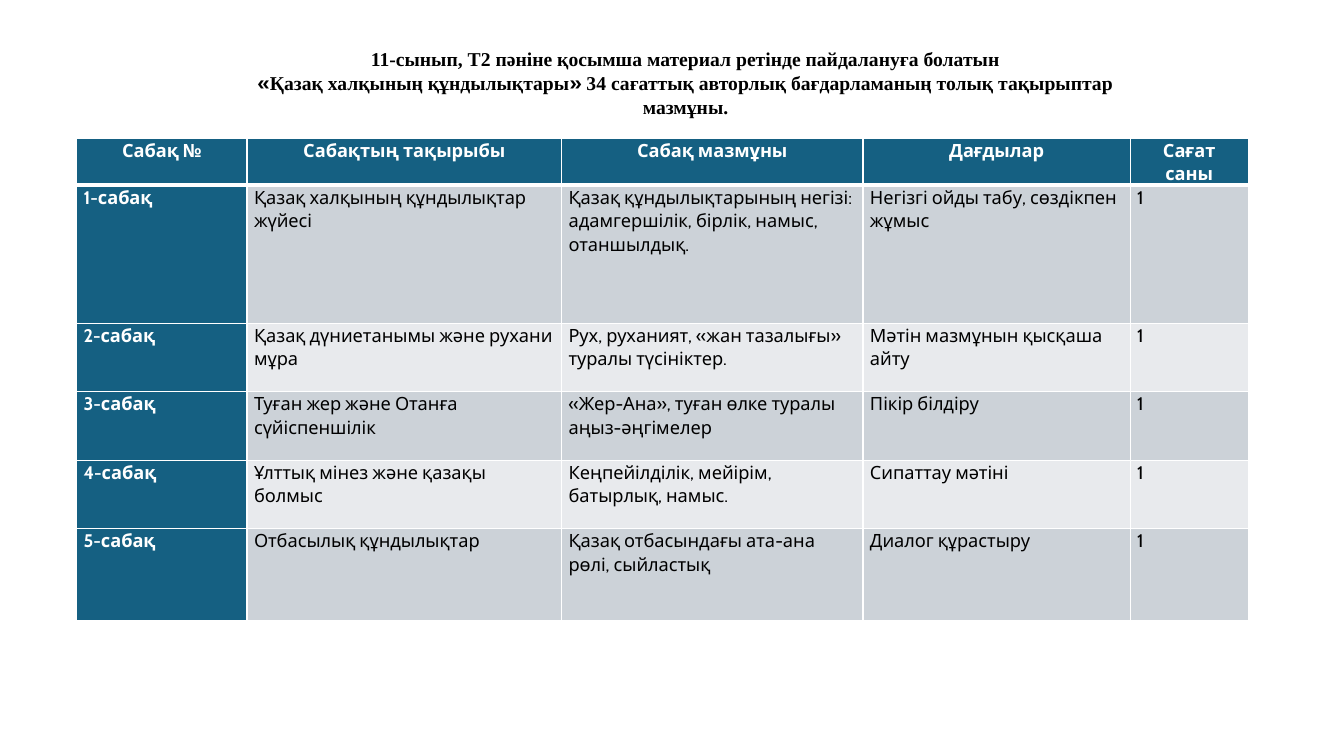
from pptx import Presentation
from pptx import util as u
from pptx.dml.color import RGBColor
from pptx.enum import text
from pptx.oxml import parse_xml
from pptx.oxml.ns import nsdecls

COLOURS = {
    "accent": "156082",
    "odd": "CCD2D8",
    "even": "E8EAED",
    "light": "FFFFFF",
    "dark": "000000",
}

TITLE = [
    [("11-сынып, Т2 пәніне қосымша материал ретінде пайдалануға болатын", "Times New Roman")],
    [
        ("«", "Cabin"),
        ("Қазақ халқының құндылықтары", "Times New Roman"),
        ("»", "Cabin"),
        (" 34 сағаттық авторлық бағдарламаның толық тақырыптар мазмұны.", "Times New Roman"),
    ],
]

LESSONS = [
    ("Сабақ №", "Сабақтың тақырыбы", "Сабақ мазмұны", "Дағдылар", "Сағат саны"),
    ("1-сабақ", "Қазақ халқының құндылықтар жүйесі",
     "Қазақ құндылықтарының негізі: адамгершілік, бірлік, намыс, отаншылдық.",
     "Негізгі ойды табу, сөздікпен жұмыс", "1"),
    ("2-сабақ", "Қазақ дүниетанымы және рухани мұра",
     "Рух, руханият, «жан тазалығы» туралы түсініктер.",
     "Мәтін мазмұнын қысқаша айту", "1"),
    ("3-сабақ", "Туған жер және Отанға сүйіспеншілік",
     "«Жер-Ана», туған өлке туралы аңыз-әңгімелер", "Пікір білдіру", "1"),
    ("4-сабақ", "Ұлттық мінез және қазақы болмыс",
     "Кеңпейілділік, мейірім, батырлық, намыс.", "Сипаттау мәтіні", "1"),
    ("5-сабақ", "Отбасылық құндылықтар",
     "Қазақ отбасындағы ата-ана рөлі, сыйластық", "Диалог құрастыру", "1"),
]
COLUMN_WIDTHS = [1.69, 3.12, 2.99, 2.65, 1.17]
ROW_HEIGHTS = [0.45, 1.37, 0.68, 0.68, 0.68, 0.91]


class LessonPage:
    """Holds the style and the current slide, and adds its elements."""

    def __init__(self, deck):
        self.page = deck.slides.add_slide(deck.slide_layouts[5])
        self.font = "Cabin"

    def colour(self, name):
        return RGBColor.from_string(COLOURS[name])

    def title(self, lines, left, top, width, height):
        box = self.page.shapes.title
        box.left, box.top = u.Inches(left), u.Inches(top)
        box.width, box.height = u.Inches(width), u.Inches(height)
        frame = box.text_frame
        frame.word_wrap = False
        frame.auto_size = text.MSO_AUTO_SIZE.NONE
        frame.vertical_anchor = text.MSO_ANCHOR.TOP
        frame.margin_top = u.Inches(0.07)
        for index, line in enumerate(lines):
            para = frame.add_paragraph() if index else frame.paragraphs[0]
            para.alignment = text.PP_ALIGN.CENTER
            para.font.size = u.Pt(14)
            para.font.bold = True
            para.font.color.rgb = self.colour("dark")
            for words, font in line:
                span = para.add_run()
                span.text = words
                span.font.name = font

    def borders(self, cell, top, bottom):
        properties = cell._tc.get_or_add_tcPr()
        for side, points in (("L", 1), ("R", 1), ("T", top), ("B", bottom)):
            properties.append(parse_xml(
                f'<a:ln{side} {nsdecls("a")} w="{u.Pt(points)}"><a:solidFill>'
                f'<a:srgbClr val="{COLOURS["light"]}"/></a:solidFill></a:ln{side}>'))

    def cell(self, cell, words, row, column):
        heading = row == 0 or column == 0
        self.borders(cell, 3 if row == 1 else 1, 3 if row == 0 else 1)
        cell.fill.solid()
        band = "odd" if row % 2 else "even"
        cell.fill.fore_color.rgb = self.colour("accent" if heading else band)
        cell.margin_left = cell.margin_right = u.Inches(0.07)
        cell.margin_top = cell.margin_bottom = 0
        cell.text = words
        para = cell.text_frame.paragraphs[0]
        para.alignment = text.PP_ALIGN.LEFT if row else text.PP_ALIGN.CENTER
        para.line_spacing = 1.07
        para.space_after = u.Pt(8)
        para.font.name = self.font
        para.font.size = u.Pt(13)
        para.font.bold = heading
        para.font.color.rgb = self.colour("light" if heading else "dark")

    def table(self, rows, left, top, widths, heights):
        table = self.page.shapes.add_table(
            len(rows), len(widths), u.Inches(left), u.Inches(top),
            u.Inches(sum(widths)), u.Inches(sum(heights))).table
        for column, width in zip(table.columns, widths):
            column.width = u.Inches(width)
        for line, height in zip(table.rows, heights):
            line.height = u.Inches(height)
        for row, entries in enumerate(rows):
            for column, words in enumerate(entries):
                self.cell(table.cell(row, column), words, row, column)


def main():
    deck = Presentation()
    deck.slide_width, deck.slide_height = u.Inches(13.33), u.Inches(7.5)
    lessons = LessonPage(deck)
    lessons.title(TITLE, 2.01, 0.4, 9.58, 0.81)
    lessons.table(LESSONS, 0.76, 1.37, COLUMN_WIDTHS, ROW_HEIGHTS)
    deck.save("out.pptx")


if __name__ == "__main__":
    main()
